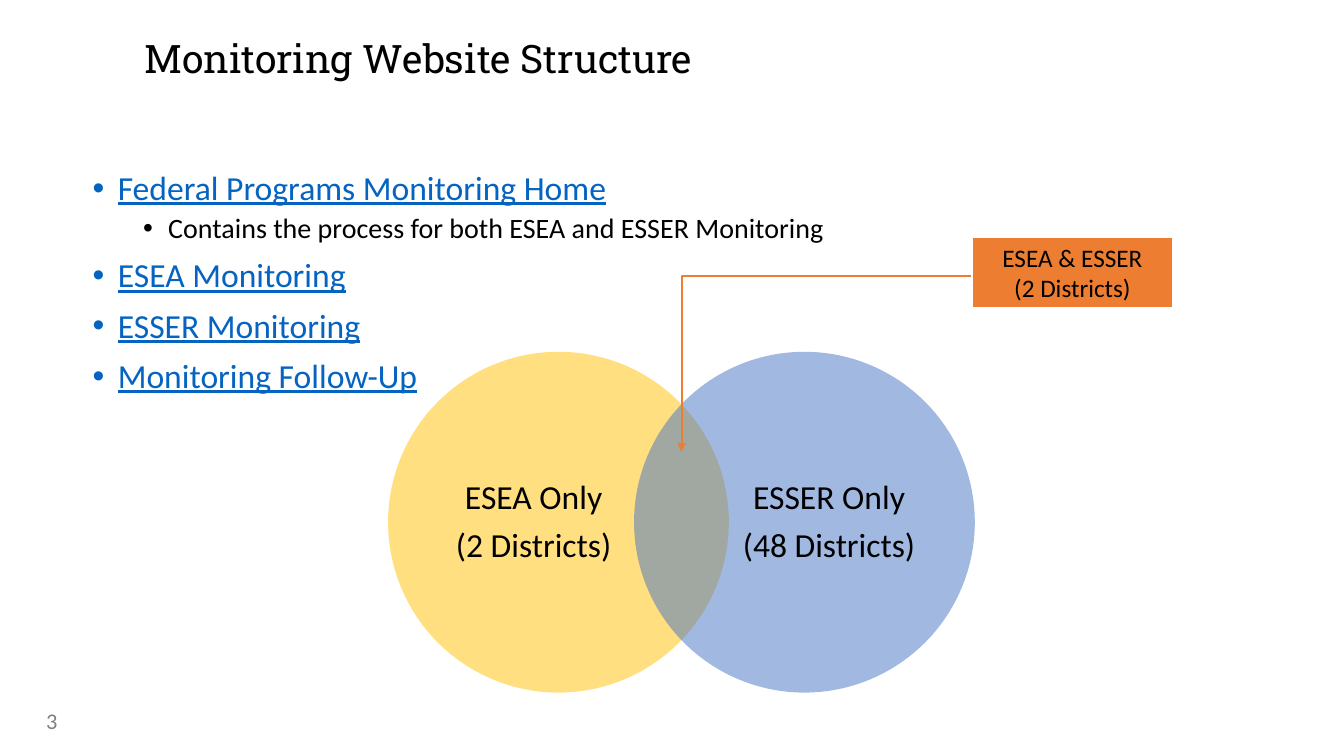
from lxml import etree
from pptx import Presentation
from pptx.dml.color import RGBColor
from pptx.enum.shapes import MSO_CONNECTOR, MSO_SHAPE
from pptx.enum.text import MSO_ANCHOR, PP_ALIGN
from pptx.oxml.ns import qn
from pptx.util import Pt

ELBOW = MSO_CONNECTOR.ELBOW
OVAL, RECT = MSO_SHAPE.OVAL, MSO_SHAPE.RECTANGLE
TOP, MIDDLE = MSO_ANCHOR.TOP, MSO_ANCHOR.MIDDLE
LEFT, CENTER = PP_ALIGN.LEFT, PP_ALIGN.CENTER

BLACK = RGBColor(0x00, 0x00, 0x00)
WHITE = RGBColor(0xFF, 0xFF, 0xFF)
GRAY = RGBColor(0x80, 0x80, 0x80)
BLUE = RGBColor(0x44, 0x72, 0xC4)
LINK = RGBColor(0x05, 0x63, 0xC1)
GOLD = RGBColor(0xFF, 0xC0, 0x00)
ORANGE = RGBColor(0xED, 0x7D, 0x31)
BODY, SLAB = "Calibri", "Roboto Slab"

TITLE = "Monitoring Website Structure"
ITEMS = [
    (0, "Federal Programs Monitoring Home"),
    (1, "Contains the process for both ESEA and ESSER Monitoring"),
    (0, "ESEA Monitoring"),
    (0, "ESSER Monitoring"),
    (0, "Monitoring Follow-Up"),
]
LEVELS = [
    dict(size=24, color=LINK, under=True, before=10, margin=18),
    dict(size=20, color=BLACK, under=False, before=5, margin=54),
]
SETS = [
    (277.2, 311, GOLD, ["ESEA Only", "(2 Districts)"]),
    (452.9, 522, BLUE, ["ESSER Only", "(48 Districts)"]),
]
BOTH = ["ESEA & ESSER", "(2 Districts)"]
NUMBER = "3"
DISC_TOP, DISC = 251.3, 243.4
LABEL_W, LABEL_H = 140.4, 185.8
BOX = (694.1, 169.2, 144, 51.1)
START, END = (694.1, 197.3), (486.7, 322.6)


def write(para, text, size, color, font=BODY, under=False):
    run = para.add_run()
    run.text = text
    run.font.name = font
    run.font.size = Pt(size)
    run.font.color.rgb = color
    run.font.underline = under


def setup(frame, anchor=TOP, inset=True):
    frame.word_wrap = True
    frame.vertical_anchor = anchor
    if not inset:
        frame.margin_left = frame.margin_right = 0
        frame.margin_top = frame.margin_bottom = 0
    return frame


def add_box(shapes, x, y, w, h, anchor=TOP, inset=False):
    box = shapes.add_textbox(Pt(x), Pt(y), Pt(w), Pt(h))
    return setup(box.text_frame, anchor, inset)


def add_line(frame, first, align=LEFT):
    para = frame.paragraphs[0] if first else frame.add_paragraph()
    para.alignment = align
    return para


def add_shape(shapes, kind, x, y, w, h, color):
    shape = shapes.add_shape(kind, Pt(x), Pt(y), Pt(w), Pt(h))
    shape.shadow.inherit = False
    shape.fill.solid()
    shape.fill.fore_color.rgb = color
    return shape


def add_list(shapes):
    frame = add_box(shapes, 66.2, 122.4, 828, 342.7)
    for i, (level, text) in enumerate(ITEMS):
        style = LEVELS[level]
        para = add_line(frame, i == 0)
        para.level = level
        para.line_spacing = 0.9
        if i:
            para.space_before = Pt(style["before"])
        props = para._p.get_or_add_pPr()
        props.set("marL", str(Pt(style["margin"])))
        props.set("indent", str(-Pt(18)))
        etree.SubElement(props, qn("a:buFont")).set("typeface", "Arial")
        etree.SubElement(props, qn("a:buChar")).set("char", "•")
        write(para, text, style["size"], style["color"], under=style["under"])


def add_venn(shapes):
    group = shapes.add_group_shape().shapes
    top = DISC_TOP + (DISC - LABEL_H) / 2
    for x, label_x, color, lines in SETS:
        disc = add_shape(group, OVAL, x, DISC_TOP, DISC, DISC, color)
        disc.line.fill.background()
        tint = disc.fill._xPr.find(".//" + qn("a:srgbClr"))
        etree.SubElement(tint, qn("a:alpha")).set("val", "50000")
        frame = add_box(group, label_x, top, LABEL_W, LABEL_H, MIDDLE)
        for i, text in enumerate(lines):
            para = add_line(frame, i == 0, CENTER)
            para.line_spacing = 0.9
            para.space_after = Pt(8.4)
            write(para, text, 24, BLACK)


def add_arrow(shapes):
    arrow = shapes.add_connector(ELBOW, *map(Pt, START + END))
    arrow.line.color.rgb = ORANGE
    arrow.line.width = Pt(1.5)
    tail = etree.SubElement(arrow.line._get_or_add_ln(), qn("a:tailEnd"))
    tail.set("type", "triangle")
    props = arrow._element.spPr
    etree.SubElement(props, qn("a:effectLst"))
    bend = etree.SubElement(props.find(".//" + qn("a:avLst")), qn("a:gd"))
    bend.set("name", "adj1")
    bend.set("fmla", "val 99900")


def add_both(shapes):
    box = add_shape(shapes, RECT, *BOX, ORANGE)
    box.line.color.rgb = WHITE
    box.line.width = Pt(1.5)
    frame = setup(box.text_frame)
    for i, text in enumerate(BOTH):
        write(add_line(frame, i == 0, CENTER), text, 18, BLACK)


def main():
    deck = Presentation()
    deck.slide_width, deck.slide_height = Pt(960), Pt(540)
    shapes = deck.slides.add_slide(deck.slide_layouts[6]).shapes
    title = add_line(add_box(shapes, 103, 28.1, 567.4, 59), True)
    title.line_spacing = 0.9
    write(title, TITLE, 28, BLACK, SLAB)
    add_list(shapes)
    add_venn(shapes)
    add_arrow(shapes)
    add_both(shapes)
    foot = add_box(shapes, 25.9, 500.4, 216, 28.8, MIDDLE, True)
    write(add_line(foot, True), NUMBER, 16, GRAY)
    deck.save("out.pptx")


if __name__ == "__main__":
    main()
